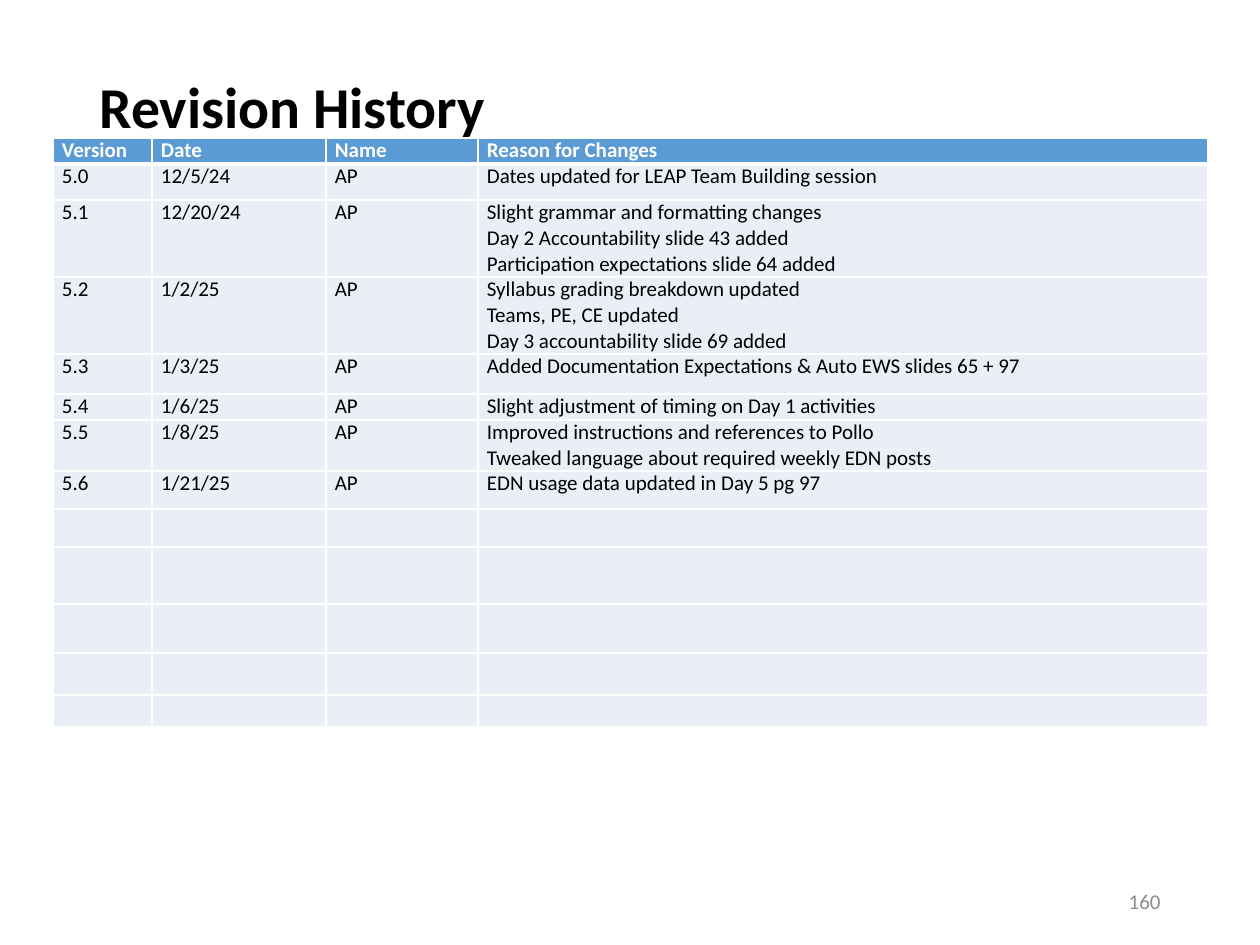
"""Builds the revision history slide with its version table."""
from dataclasses import dataclass

from lxml import etree
from pptx import Presentation
from pptx import util as u
from pptx.dml import color
from pptx.enum import text
from pptx.oxml import ns


@dataclass(frozen=True)
class Theme:
    font: str = "Calibri"
    ink: str = "000000"
    paper: str = "FFFFFF"
    muted: str = "8C8C8C"
    header: str = "5B9BD5"
    band: str = "EAEFF7"
    title_size: int = 33
    body_size: int = 12
    thin: int = 1
    thick: int = 3


def px(count):
    return u.Emu(round(count * 914400 / 126))


def assign(target, values):
    for name, value in values.items():
        setattr(target, name, value)


class Deck:
    def __init__(self, theme, width, height):
        self.theme = theme
        self.presentation = Presentation()
        assign(self.presentation, {"slide_width": px(width), "slide_height": px(height)})
        self.slide = self.presentation.slides.add_slide(self.presentation.slide_layouts[6])

    def wording(self, paragraph, words, ink, size, bold=False):
        run = paragraph.add_run()
        run.text = words
        assign(run.font, {"name": self.theme.font, "size": u.Pt(size), "bold": bold})
        run.font.color.rgb = color.RGBColor.from_string(ink)

    def label(self, box, words, ink, size, bold=False, frame_format=None, paragraph_format=None):
        frame = self.slide.shapes.add_textbox(*map(px, box)).text_frame
        assign(frame, {"word_wrap": True, "vertical_anchor": text.MSO_ANCHOR.MIDDLE,
                       **(frame_format or {})})
        assign(frame.paragraphs[0], paragraph_format or {})
        self.wording(frame.paragraphs[0], words, ink, size, bold)

    def borders(self, cell, widths):
        properties = cell._tc.get_or_add_tcPr()
        for side, width in zip("LRTB", widths):
            line = etree.SubElement(properties, ns.qn(f"a:ln{side}"), w=str(u.Pt(width)))
            fill = etree.SubElement(line, ns.qn("a:solidFill"))
            etree.SubElement(fill, ns.qn("a:srgbClr"), val=self.theme.paper)

    def cell(self, cell, words, row):
        theme = self.theme
        is_header = row == 0
        assign(cell, {"margin_left": px(9), "margin_right": px(9),
                      "margin_top": 0, "margin_bottom": 0})
        top = theme.thick if row == 1 else theme.thin
        bottom = theme.thick if is_header else theme.thin
        self.borders(cell, (theme.thin, theme.thin, top, bottom))
        cell.fill.solid()
        cell.fill.fore_color.rgb = color.RGBColor.from_string(theme.header if is_header else theme.band)
        frame = cell.text_frame
        for index, line in enumerate(words.split("\n")):
            paragraph = frame.add_paragraph() if index else frame.paragraphs[0]
            if line:
                self.wording(paragraph, line, theme.paper if is_header else theme.ink,
                             theme.body_size, is_header)
            else:
                paragraph._p.get_or_add_endParaRPr().set("sz", str(theme.body_size * 100))

    def table(self, left, top, widths, heights, records):
        box = (left, top, sum(widths), sum(heights))
        grid = self.slide.shapes.add_table(len(heights), len(widths), *map(px, box)).table
        for column, width in zip(grid.columns, widths):
            column.width = px(width)
        for index, height in enumerate(heights):
            grid.rows[index].height = px(height)
            record = records[index] if index < len(records) else [""] * len(widths)
            for column, words in enumerate(record):
                self.cell(grid.cell(index, column), words, index)


REVISIONS = [
    ("5.0", "12/5/24", "Dates updated for LEAP Team Building session"),
    ("5.1", "12/20/24", "Slight grammar and formatting changes\n"
                        "Day 2 Accountability slide 43 added\n"
                        "Participation expectations slide 64 added"),
    ("5.2", "1/2/25", "Syllabus grading breakdown updated\n"
                      "Teams, PE, CE updated\n"
                      "Day 3 accountability slide 69 added"),
    ("5.3", "1/3/25", "Added Documentation Expectations & Auto EWS slides 65 + 97"),
    ("5.4", "1/6/25", "Slight adjustment of timing on Day 1 activities"),
    ("5.5", "1/8/25", "Improved instructions and references to Pollo\n"
                      "Tweaked language about required weekly EDN posts"),
    ("5.6", "1/21/25", "EDN usage data updated in Day 5 pg 97"),
]
COLUMN_WIDTHS = [99, 174, 152, 730]
ROW_HEIGHTS = [26, 36, 77, 77, 40, 26, 51, 38, 38, 57, 49, 42, 32]


def main():
    theme = Theme()
    deck = Deck(theme, 1260, 945)
    deck.label((87, 50, 1086, 183), "Revision History", theme.ink, theme.title_size, True,
               {"margin_bottom": px(69)}, {"line_spacing": 0.9})
    records = [("Version", "Date", "Name", "Reason for Changes")]
    records += [(version, date, "AP", reason) for version, date, reason in REVISIONS]
    deck.table(53, 138, COLUMN_WIDTHS, ROW_HEIGHTS, records)
    deck.label((890, 876, 283, 50), "160", theme.muted, theme.body_size,
               paragraph_format={"alignment": text.PP_ALIGN.RIGHT})
    deck.presentation.save("out.pptx")


if __name__ == "__main__":
    main()
